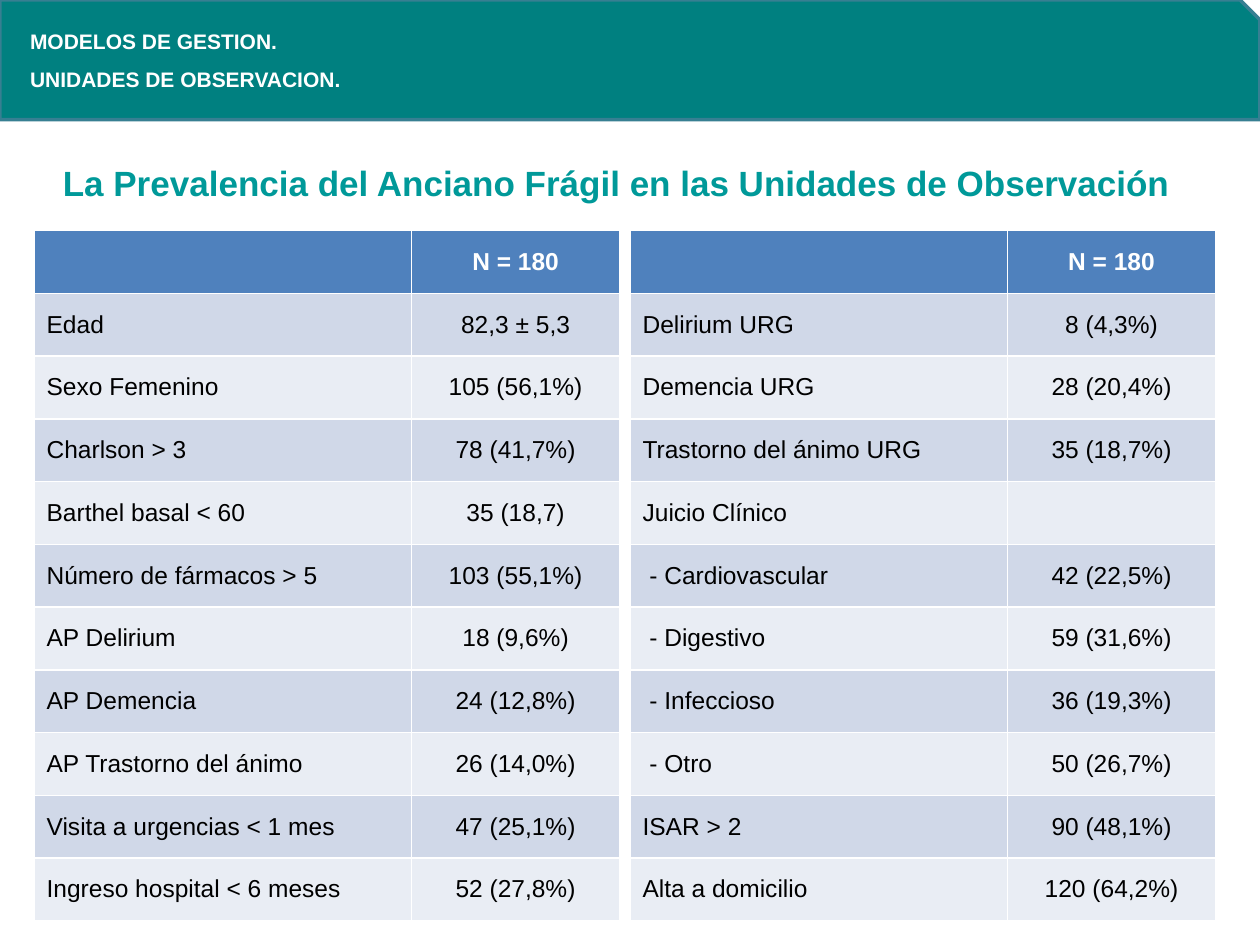
from pptx import Presentation
from pptx.dml.color import RGBColor as RGB
from pptx.enum.shapes import MSO_SHAPE as SHAPE
from pptx.enum.text import MSO_ANCHOR as ANCHOR, MSO_AUTO_SIZE as FIT, PP_ALIGN as ALIGN
from pptx.util import Inches, Pt

THEME = {
    "teal": RGB.from_string("008080"),
    "edge": RGB.from_string("377F92"),
    "header": RGB.from_string("4F81BD"),
    "bands": [RGB.from_string("E9EDF4"), RGB.from_string("D0D8E8")],
    "banner": {"size": Pt(12), "bold": True, "color": RGB.from_string("FFFFFF")},
    "title": {"size": Pt(20), "bold": True, "color": RGB.from_string("009999")},
    "head": {"size": Pt(14), "bold": True, "color": RGB.from_string("FFFFFF")},
    "body": {"size": Pt(14), "bold": False, "color": RGB.from_string("000000")},
    "gap": Pt(7),
}

TABLES = [
    [
        ("", "N = 180"),
        ("Edad", "82,3 ± 5,3"),
        ("Sexo Femenino", "105 (56,1%)"),
        ("Charlson > 3", "78 (41,7%)"),
        ("Barthel basal < 60", "35 (18,7)"),
        ("Número de fármacos > 5", "103 (55,1%)"),
        ("AP Delirium", "18 (9,6%)"),
        ("AP Demencia", "24 (12,8%)"),
        ("AP Trastorno del ánimo", "26 (14,0%)"),
        ("Visita a urgencias < 1 mes", "47 (25,1%)"),
        ("Ingreso hospital < 6 meses", "52 (27,8%)"),
    ],
    [
        ("", "N = 180"),
        ("Delirium URG", "8 (4,3%)"),
        ("Demencia URG", "28 (20,4%)"),
        ("Trastorno del ánimo URG", "35 (18,7%)"),
        ("Juicio Clínico", ""),
        (" - Cardiovascular", "42 (22,5%)"),
        (" - Digestivo", "59 (31,6%)"),
        (" - Infeccioso", "36 (19,3%)"),
        (" - Otro", "50 (26,7%)"),
        ("ISAR > 2", "90 (48,1%)"),
        ("Alta a domicilio", "120 (64,2%)"),
    ],
]

prs = Presentation()
prs.slide_width, prs.slide_height = Inches(10), Inches(7.5)
s = prs.slides.add_slide(prs.slide_layouts[6])


def box(x, y, w, h):
    W, H = prs.slide_width, prs.slide_height
    return [int(v * side / 100) for v, side in zip((x, y, w, h), (W, H, W, H))]


def write(tf, lines, style, align):
    for i, line in enumerate(lines):
        p = tf.add_paragraph() if i else tf.paragraphs[0]
        p.alignment = align
        p.space_before = THEME["gap"] if i else Pt(0)
        r = p.add_run()
        r.text = line
        r.font.name = "Arial"
        r.font.color.rgb = style["color"]
        for name in ("size", "bold"):
            setattr(r.font, name, style[name])


for i, rows in enumerate(TABLES):
    frame = s.shapes.add_table(len(rows), 2, *box(2.7 + 47.3 * i, 24.4, 46.5, 73.07))
    table = frame.table
    for col, share in zip(table.columns, (29.95, 16.55)):
        col.width = int(prs.slide_width * share / 100)
    for n, row in enumerate(rows):
        for c, text in enumerate(row):
            cell = table.cell(n, c)
            cell.vertical_anchor = ANCHOR.MIDDLE
            cell.fill.solid()
            cell.fill.fore_color.rgb = THEME["bands"][n % 2] if n else THEME["header"]
            if text:
                style = THEME["body" if n else "head"]
                write(cell.text_frame, [text], style, ALIGN.CENTER if c else ALIGN.LEFT)

banner = s.shapes.add_shape(SHAPE.SNIP_1_RECTANGLE, *box(0, 0, 100, 12.67))
banner.shadow.inherit = False
banner.fill.solid()
banner.fill.fore_color.rgb = THEME["teal"]
banner.line.color.rgb = THEME["edge"]
banner.line.width = Pt(2)

for place, lines, style, align in [
    ((4, 16.4, 90.9, 5.87),
     ["La Prevalencia del Anciano Frágil en las Unidades de Observación"],
     "title", ALIGN.JUSTIFY),
    ((1.4, 2.4, 52.1, 8.13),
     ["MODELOS DE GESTION.", "UNIDADES DE OBSERVACION."],
     "banner", ALIGN.LEFT),
]:
    tf = s.shapes.add_textbox(*box(*place)).text_frame
    for name, value in {"word_wrap": True, "auto_size": FIT.SHAPE_TO_FIT_TEXT}.items():
        setattr(tf, name, value)
    write(tf, lines, THEME[style], align)

prs.save("out.pptx")
